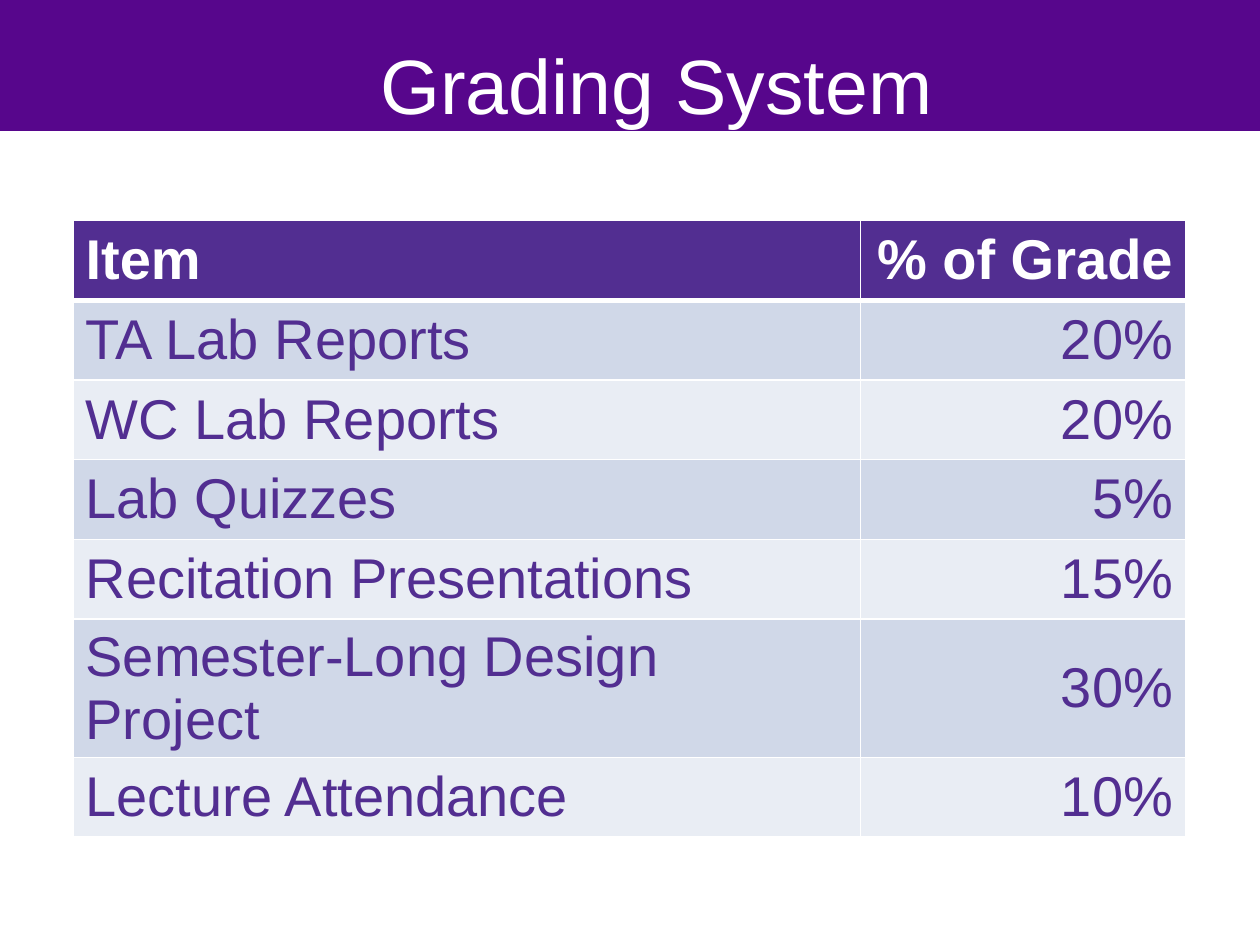
import pptx
import pptx.dml.color
import pptx.enum.shapes
import pptx.enum.text
import pptx.oxml
import pptx.oxml.ns
import pptx.util
from pptx.dml.color import RGBColor
from pptx.util import Inches

BAND_PURPLE = RGBColor(0x57, 0x06, 0x8C)
TABLE_PURPLE = RGBColor(0x52, 0x2E, 0x91)
DARK_STRIPE = RGBColor(0xD0, 0xD8, 0xE8)
LIGHT_STRIPE = RGBColor(0xE9, 0xED, 0xF4)
WHITE = RGBColor(0xFF, 0xFF, 0xFF)

GRADES = [
    ("Item", "% of Grade"),
    ("TA Lab Reports", "20%"),
    ("WC Lab Reports", "20%"),
    ("Lab Quizzes", "5%"),
    ("Recitation Presentations", "15%"),
    ("Semester-Long Design Project", "30%"),
    ("Lecture Attendance", "10%"),
]


def write_text(text_frame, text, size, color, bold=False, align="LEFT"):
    """Fill a text frame with one formatted paragraph."""
    text_frame.word_wrap = True
    paragraph = text_frame.paragraphs[0]
    paragraph.alignment = getattr(pptx.enum.text.PP_ALIGN, align)
    run = paragraph.add_run()
    run.text = text
    run.font.name = "Arial"
    run.font.size = pptx.util.Pt(size)
    run.font.bold = bold
    run.font.color.rgb = color


def add_band(slide, left, top, width, height):
    """Place the purple band behind everything else."""
    band = slide.shapes.add_shape(
        pptx.enum.shapes.MSO_SHAPE.RECTANGLE, left, top, width, height)
    band.shadow.inherit = False
    band.fill.solid()
    band.fill.fore_color.rgb = BAND_PURPLE
    band.line.fill.background()
    slide.shapes._spTree.insert(2, band._element)


def place_title(slide, text, left, top, width, height):
    """Move and format the title placeholder."""
    title = slide.shapes.title
    title.left, title.top, title.width, title.height = left, top, width, height
    text_frame = title.text_frame
    text_frame.auto_size = pptx.enum.text.MSO_AUTO_SIZE.NONE
    text_frame.vertical_anchor = pptx.enum.text.MSO_ANCHOR.TOP
    text_frame.margin_top = Inches(0.05)
    write_text(text_frame, text, 44, WHITE)


def set_borders(cell, bottom=1, top=1):
    """Draw white borders of the given point widths around a cell."""
    properties = cell._tc.get_or_add_tcPr()
    for side, points in (("L", 1), ("R", 1), ("T", top), ("B", bottom)):
        properties.append(pptx.oxml.parse_xml(
            f'<a:ln{side} {pptx.oxml.ns.nsdecls("a")} w="{pptx.util.Pt(points)}">'
            f'<a:solidFill><a:srgbClr val="{WHITE}"/></a:solidFill></a:ln{side}>'))


def add_grade_table(slide, grades, left, top, column_widths, height):
    """Place the striped table of items and their share of the grade."""
    table = slide.shapes.add_table(
        len(grades), len(column_widths), left, top,
        sum(column_widths), height).table
    for column, width in zip(table.columns, column_widths):
        column.width = width
    for row_index, texts in enumerate(grades):
        header = row_index == 0
        stripe = DARK_STRIPE if row_index % 2 else LIGHT_STRIPE
        for column_index, text in enumerate(texts):
            cell = table.cell(row_index, column_index)
            set_borders(cell, bottom=3 if header else 1,
                        top=3 if row_index == 1 else 1)
            cell.fill.solid()
            cell.fill.fore_color.rgb = TABLE_PURPLE if header else stripe
            cell.vertical_anchor = pptx.enum.text.MSO_ANCHOR.MIDDLE
            write_text(cell.text_frame, text, 32,
                       WHITE if header else TABLE_PURPLE, bold=header,
                       align="RIGHT" if column_index else "LEFT")


def main():
    """Build and save the grading slide."""
    presentation = pptx.Presentation()
    presentation.slide_width = Inches(10)
    presentation.slide_height = Inches(7.5)
    slide = presentation.slides.add_slide(presentation.slide_layouts[5])
    add_band(slide, 0, 0, presentation.slide_width, Inches(1.04))
    place_title(slide, "Grading System",
                Inches(2.92), Inches(0.25), Inches(5), Inches(1.25))
    add_grade_table(slide, GRADES, Inches(0.58), Inches(1.75),
                    [Inches(6.25), Inches(2.58)], Inches(4.43))
    presentation.save("out.pptx")


if __name__ == "__main__":
    main()
